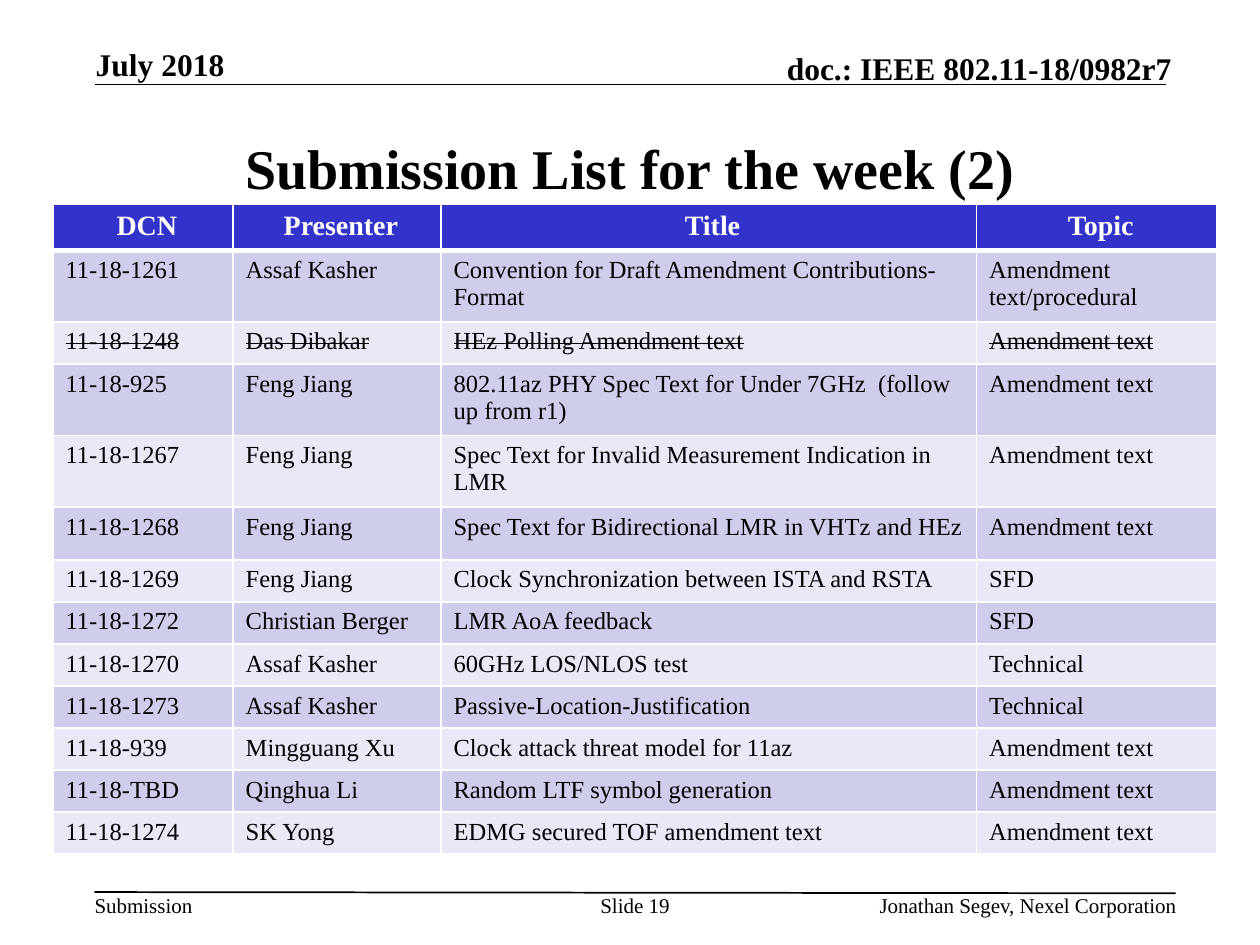
"""Build the July 2018 submission list slide with its header, footer and table."""
from lxml import etree
from pptx import Presentation
from pptx import util as u
from pptx.dml.color import RGBColor
from pptx.enum import shapes, text
from pptx.oxml.ns import qn


def color(value):
    return RGBColor.from_string(value)


def write(frame, words, size, ink="000000", bold=False, align="LEFT", anchor="TOP"):
    frame.vertical_anchor = getattr(text.MSO_ANCHOR, anchor)
    paragraph = frame.paragraphs[0]
    paragraph.alignment = getattr(text.PP_ALIGN, align)
    run = paragraph.add_run()
    run.text = words
    font_format = {"name": "Times New Roman", "size": u.Pt(size), "bold": bold}
    for name, value in font_format.items():
        setattr(run.font, name, value)
    run.font.color.rgb = color(ink)
    return run


presentation = Presentation()
presentation.slide_width = u.Inches(10)
presentation.slide_height = u.Inches(7.5)
slide = presentation.slides.add_slide(presentation.slide_layouts[5])

for ends in [(0.75, 0.67, 9.25, 0.67), (0.75, 7.08, 9.33, 7.09)]:
    rule = slide.shapes.add_connector(shapes.MSO_CONNECTOR.STRAIGHT, *map(u.Inches, ends))
    rule.line.color.rgb = color("000000")
    rule.line.width = u.Pt(1)
    etree.SubElement(rule._element.spPr, qn("a:effectLst"))

title = slide.shapes.title
title_box = {"left": 0.75, "top": 0.75, "width": 8.5, "height": 1.16}
for name, value in title_box.items():
    setattr(title, name, u.Inches(value))
title.text_frame.auto_size = text.MSO_AUTO_SIZE.NONE
write(title.text_frame, "Submission List for the week (2)", 32,
      bold=True, align="CENTER", anchor="MIDDLE")

header = {"size": 18, "bold": True, "anchor": "BOTTOM"}
footer = {"size": 12}
labels = [
    ("July 2018", (0.76, 0.36, 2.05, 0.3), header, "LEFT"),
    ("doc.: IEEE 802.11-18/0982r7", (5.47, 0.39, 3.83, 0.3), header, "RIGHT"),
    ("Submission", (0.75, 7.08, 0.78, 0.2), footer, "LEFT"),
    ("Slide 19", (4.75, 7.08, 0.58, 0.4), footer, "CENTER"),
    ("Jonathan Segev, Nexel Corporation", (5.86, 7.08, 3.48, 0.2), footer, "RIGHT"),
]
for words, box, style, align in labels:
    frame = slide.shapes.add_textbox(*map(u.Inches, box)).text_frame
    frame.word_wrap = words != "Submission"
    for side in ("left", "top", "right", "bottom"):
        setattr(frame, f"margin_{side}", 0)
    write(frame, words, align=align, **style)

submissions = [
    ("DCN", "Presenter", "Title", "Topic"),
    ("11-18-1261", "Assaf Kasher", "Convention for Draft Amendment Contributions-Format",
     "Amendment text/procedural"),
    ("11-18-1248", "Das Dibakar", "HEz Polling Amendment text", "Amendment text"),
    ("11-18-925", "Feng Jiang", "802.11az PHY Spec Text for Under 7GHz  (follow up from r1)",
     "Amendment text"),
    ("11-18-1267", "Feng Jiang", "Spec Text for Invalid Measurement Indication in LMR",
     "Amendment text"),
    ("11-18-1268", "Feng Jiang", "Spec Text for Bidirectional LMR in VHTz and HEz",
     "Amendment text"),
    ("11-18-1269", "Feng Jiang", "Clock Synchronization between ISTA and RSTA", "SFD"),
    ("11-18-1272", "Christian Berger", "LMR AoA feedback", "SFD"),
    ("11-18-1270", "Assaf Kasher", "60GHz LOS/NLOS test", "Technical"),
    ("11-18-1273", "Assaf Kasher", "Passive-Location-Justification", "Technical"),
    ("11-18-939", "Mingguang Xu", "Clock attack threat model for 11az", "Amendment text"),
    ("11-18-TBD", "Qinghua Li", "Random LTF symbol generation", "Amendment text"),
    ("11-18-1274", "SK Yong", "EDMG secured TOF amendment text", "Amendment text"),
]
withdrawn = "11-18-1248"
column_widths = [1.43, 1.65, 4.25, 1.91]
row_heights = [0.36, 0.53, 0.31, 0.53, 0.53, 0.42] + [0.31] * 7

table = slide.shapes.add_table(
    len(submissions), len(column_widths), u.Inches(0.42), u.Inches(1.62),
    u.Inches(sum(column_widths)), u.Inches(sum(row_heights))).table
for column, width in zip(table.columns, column_widths):
    column.width = u.Inches(width)

for row_index, (submission, height) in enumerate(zip(submissions, row_heights)):
    table.rows[row_index].height = u.Inches(height)
    is_header = row_index == 0
    fill = "3333CC" if is_header else ("E8E8F6", "CECEEC")[row_index % 2]
    border_widths = {"L": 1, "R": 1, "T": 3 if row_index == 1 else 1, "B": 3 if is_header else 1}
    for column_index, words in enumerate(submission):
        cell = table.cell(row_index, column_index)
        if is_header:
            cell.margin_right = u.Inches(0.04)
            write(cell.text_frame, words, 16, "FFFFFF", True, "CENTER")
        else:
            run = write(cell.text_frame, words, 14)
            if submission[0] == withdrawn:
                run._r.get_or_add_rPr().set("strike", "sngStrike")
        properties = cell._tc.get_or_add_tcPr()
        for side, width in border_widths.items():
            border = etree.SubElement(properties, qn(f"a:ln{side}"), w=str(u.Pt(width)))
            solid = etree.SubElement(border, qn("a:solidFill"))
            etree.SubElement(solid, qn("a:srgbClr"), val="FFFFFF")
        cell.fill.solid()
        cell.fill.fore_color.rgb = color(fill)

presentation.save("out.pptx")
